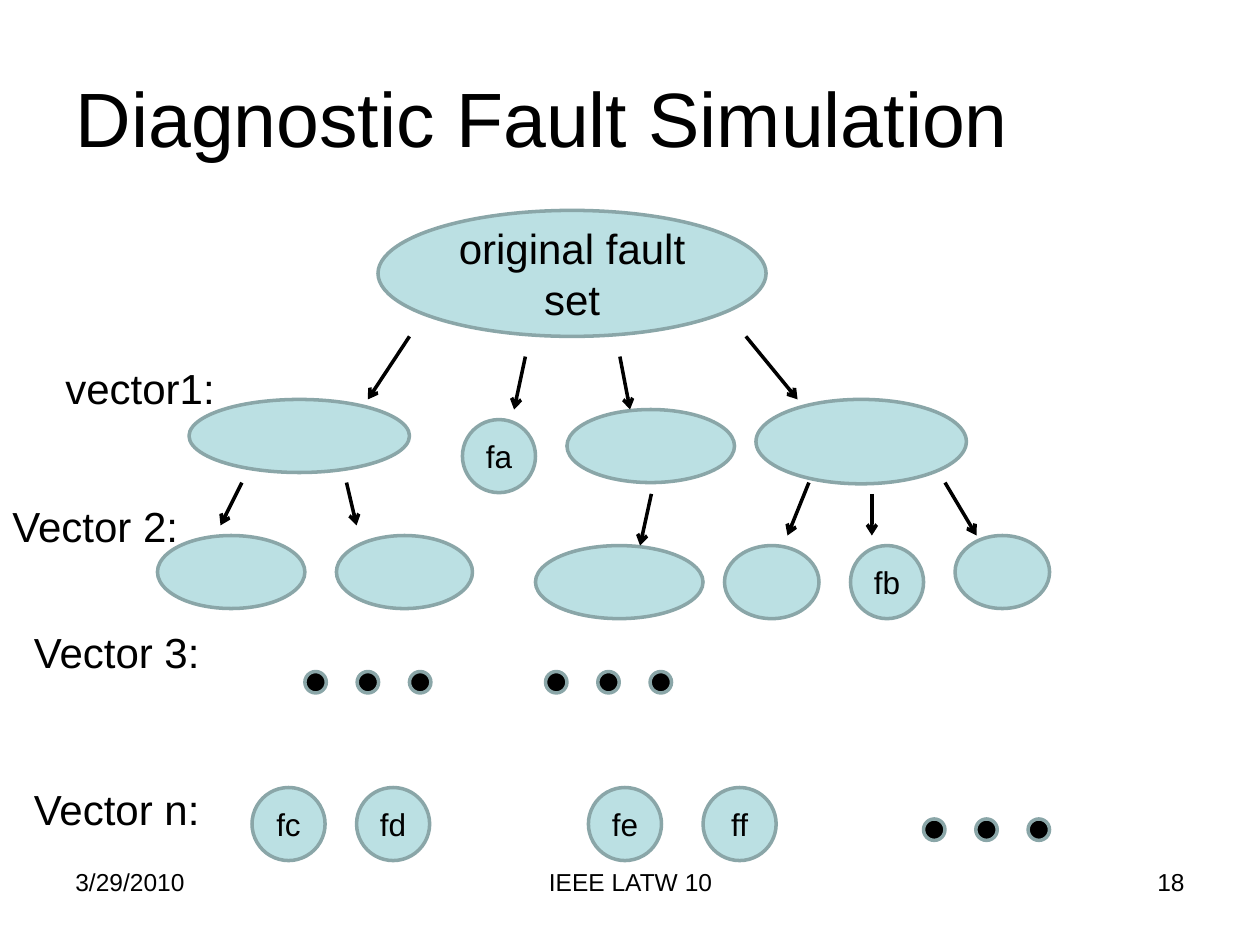
from lxml.etree import SubElement
from pptx import Presentation
from pptx.dml.color import RGBColor
from pptx.enum.shapes import MSO_CONNECTOR, MSO_SHAPE
from pptx.enum.text import MSO_ANCHOR, PP_ALIGN
from pptx.oxml.ns import qn
from pptx.util import Inches, Pt

BLACK, TEAL, TEAL_EDGE = "000000", "BBE0E3", "8AA6A8"
CIRCLE = 0.58
DOT, DOT_STEP = 0.17, 0.415

# Ellipses: left, top, width, height
NODES = [
    (1.5, 3.17, 1.75, CIRCLE), (4.5, 3.25, 1.33, CIRCLE), (6, 3.17, 1.67, 0.67),
    (1.25, 4.25, 1.17, CIRCLE), (2.67, 4.25, 1.08, CIRCLE),
    (4.25, 4.33, 1.33, CIRCLE), (5.75, 4.33, 0.75, CIRCLE),
    (7.58, 4.25, 0.75, CIRCLE),
]
# Single faults: name, left, top
FAULTS = [
    ("fa", 3.67, 3.33), ("fb", 6.75, 4.33), ("fc", 2, 6.25),
    ("fd", 2.83, 6.25), ("fe", 4.67, 6.25), ("ff", 5.58, 6.25),
]
# Arrows: start x, start y, end x, end y
ARROWS = [
    (3.25, 2.67, 2.92, 3.17), (4.17, 2.83, 4.08, 3.25),
    (4.92, 2.83, 5, 3.25), (5.92, 2.67, 6.33, 3.17),
    (1.92, 3.83, 1.75, 4.17), (2.75, 3.83, 2.83, 4.17),
    (5.17, 3.92, 5.08, 4.33), (6.42, 3.83, 6.25, 4.25),
    (6.92, 3.92, 6.92, 4.25), (7.5, 3.83, 7.75, 4.25),
]
DOT_ROWS = [(2.42, 5.33), (4.33, 5.33), (7.33, 6.5)]
LABELS = [
    ("vector1:", 0.42, 2.83, 1.5), ("Vector 2:", 0, 3.92, 1.67),
    ("Vector 3:", 0.17, 4.92, 1.75), ("Vector n:", 0.17, 6.17, 1.67),
]
FOOTERS = [
    ("3/29/2010", 0.5, 2.33, PP_ALIGN.LEFT),
    ("IEEE LATW 10", 3.42, 3.17, PP_ALIGN.CENTER),
    ("18", 7.17, 2.33, PP_ALIGN.RIGHT),
]


def color(value):
    return RGBColor.from_string(value)


def inches(*lengths):
    return [Inches(length) for length in lengths]


def write(shape, text, size, align=PP_ALIGN.LEFT, anchor=MSO_ANCHOR.TOP):
    frame = shape.text_frame
    frame.word_wrap = True
    frame.vertical_anchor = anchor
    para = frame.paragraphs[0]
    para.text = text
    para.alignment = align
    para.font.name = "Arial"
    para.font.size = Pt(size)
    para.font.color.rgb = color(BLACK)


def add_text(page, box, text, size, align=PP_ALIGN.LEFT):
    write(page.shapes.add_textbox(*inches(*box)), text, size, align)


def add_round(page, box, fill=TEAL, kind=MSO_SHAPE.OVAL):
    shape = page.shapes.add_shape(kind, *inches(*box))
    shape.shadow.inherit = False
    shape.fill.solid()
    shape.fill.fore_color.rgb = color(fill)
    shape.line.color.rgb = color(TEAL_EDGE)
    shape.line.width = Pt(2)
    return shape


def add_named(page, box, text, size):
    write(add_round(page, box), text, size, PP_ALIGN.CENTER, MSO_ANCHOR.MIDDLE)


def add_arrow(page, ends):
    arrow = page.shapes.add_connector(MSO_CONNECTOR.STRAIGHT, *inches(*ends))
    arrow.line.color.rgb = color(BLACK)
    arrow.line.width = Pt(2)
    SubElement(arrow.line._get_or_add_ln(), qn("a:tailEnd"), type="arrow")
    SubElement(arrow._element.spPr, qn("a:effectLst"))


def add_dots(page, left, top):
    for index in range(3):
        box = (left + index * DOT_STEP, top, DOT, DOT)
        add_round(page, box, BLACK, MSO_SHAPE.FLOWCHART_CONNECTOR)


def add_title(page, box, text):
    title = page.shapes.title
    title.left, title.top, title.width, title.height = inches(*box)
    write(title, text, 44, anchor=MSO_ANCHOR.MIDDLE)


def add_tree(page):
    add_named(page, (3, 1.67, 3.08, 1), "original fault set", 24)
    for box in NODES:
        add_round(page, box)
    for name, left, top in FAULTS:
        add_named(page, (left, top, CIRCLE, CIRCLE), name, 18)
    for ends in ARROWS:
        add_arrow(page, ends)
    for left, top in DOT_ROWS:
        add_dots(page, left, top)


def add_labels(page):
    for text, left, top, width in LABELS:
        add_text(page, (left, top, width, 0.5), text, 24)


def add_footer(page, top, height):
    for text, left, width, align in FOOTERS:
        add_text(page, (left, top, width, height), text, 14, align)


def main():
    deck = Presentation()
    deck.slide_width, deck.slide_height = inches(10, 7.5)
    page = deck.slides.add_slide(deck.slide_layouts[5])
    add_title(page, (0.5, 0.3, 9, 1.25), "Diagnostic Fault Simulation")
    add_tree(page)
    add_labels(page)
    add_footer(page, 6.83, 0.52)
    deck.save("out.pptx")


if __name__ == "__main__":
    main()
